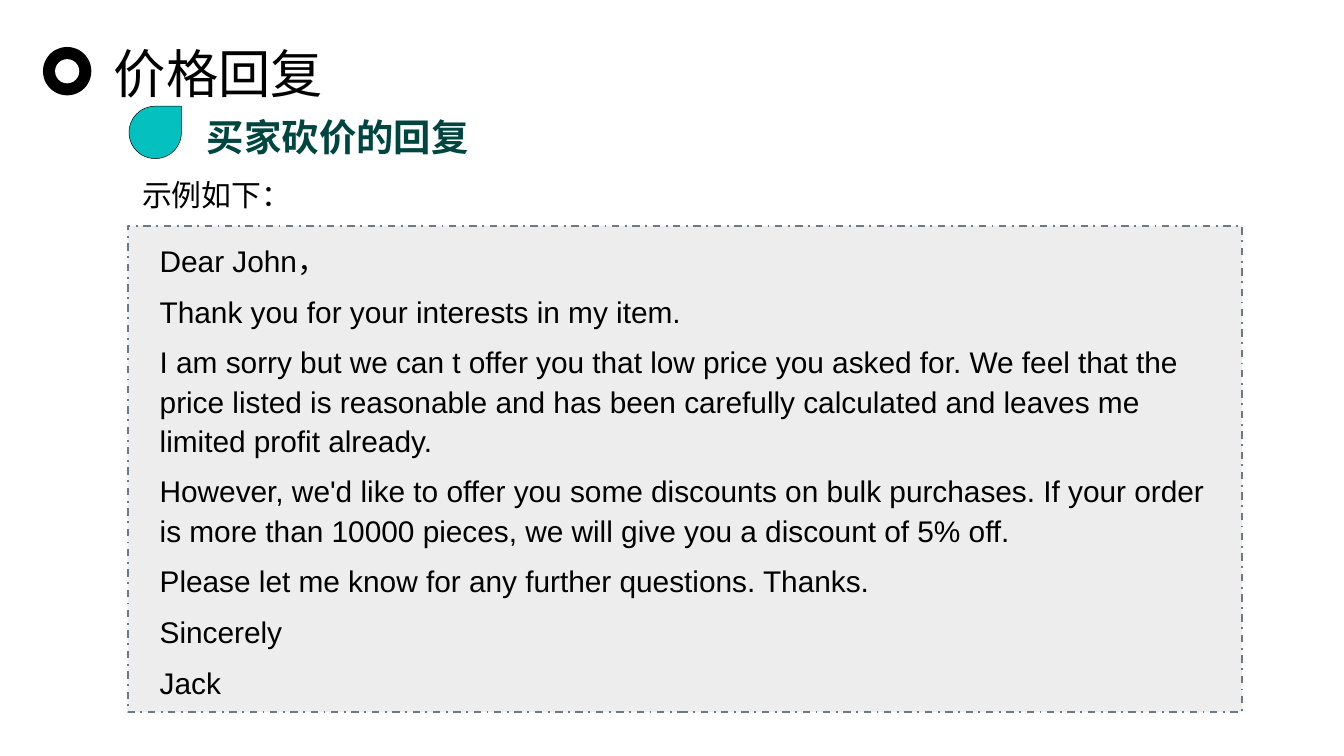
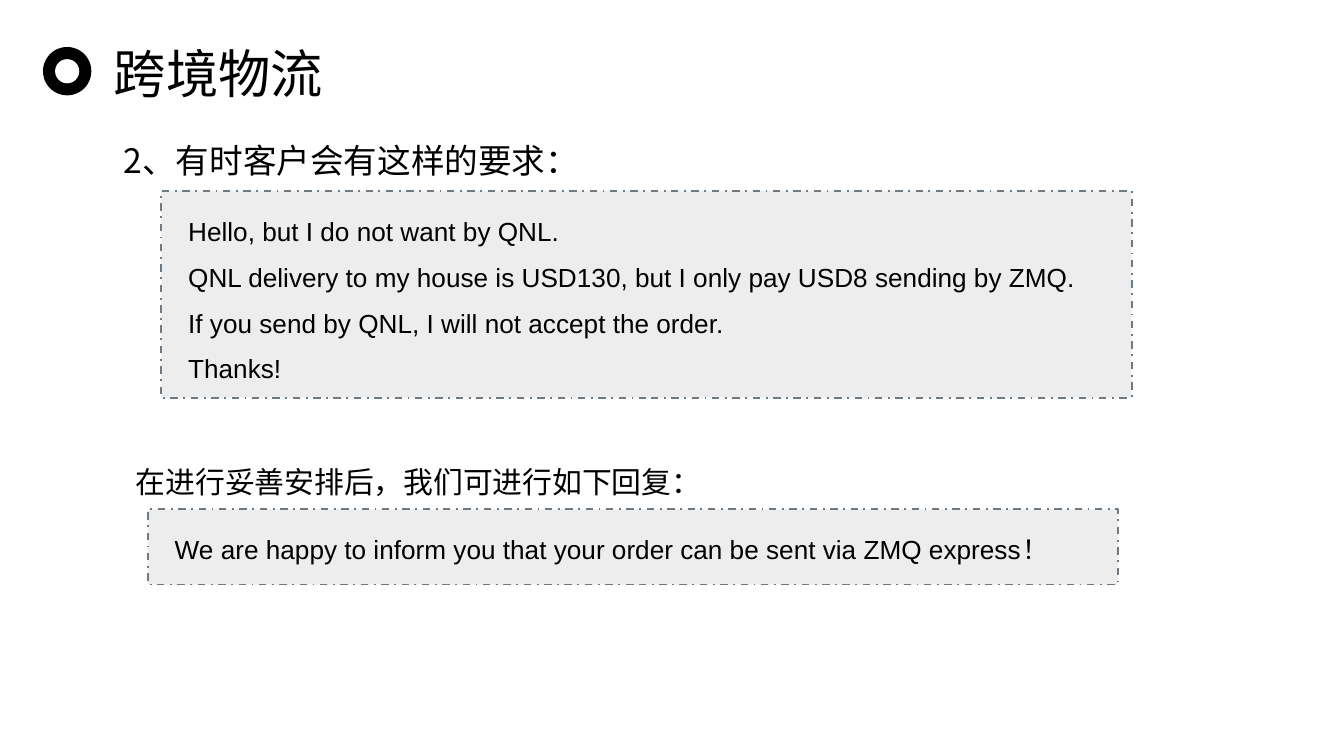
from pptx import Presentation
from pptx.dml.color import RGBColor
from pptx.enum.dml import MSO_LINE
from pptx.enum.shapes import MSO_SHAPE
from pptx.enum.text import MSO_ANCHOR, PP_ALIGN
from pptx.oxml.ns import qn
from pptx.util import Inches, Pt
from lxml.etree import SubElement

HEADING_FONT = "Noto Sans CJK SC"
LETTER_FONT = "Arial"
BLACK, WHITE = "000000", "FFFFFF"
TEAL, DARK_TEAL = "04C0BF", "004640"
PANEL_FILL, PANEL_LINE = "EEEDED", "6D7A84"
WIDE_MARGINS = (0.1, 0.05)
NARROW_MARGINS = (0.09, 0.04)


def colour(hex_string):
    return RGBColor.from_string(hex_string)


def add_filled_shape(shapes, kind, box, fill, line=None, line_width=1, dash=None):
    shape = shapes.add_shape(kind, *map(Inches, box))
    shape.shadow.inherit = False
    shape.fill.solid()
    shape.fill.fore_color.rgb = colour(fill)
    if line is None:
        shape.line.fill.background()
    else:
        shape.line.color.rgb = colour(line)
        shape.line.width = Pt(line_width)
        if dash is not None:
            shape.line.dash_style = dash
    return shape


def add_text(shapes, box, lines, size, font=HEADING_FONT, text_colour=BLACK,
             bold=False, line_spacing=1.0, space_before=0,
             margins=NARROW_MARGINS, wrap=True):
    text_frame = shapes.add_textbox(*map(Inches, box)).text_frame
    text_frame.word_wrap = wrap
    text_frame.vertical_anchor = MSO_ANCHOR.TOP
    text_frame.margin_left = text_frame.margin_right = Inches(margins[0])
    text_frame.margin_top = text_frame.margin_bottom = Inches(margins[1])
    text_frame.text = "\n".join(lines)
    for index, paragraph in enumerate(text_frame.paragraphs):
        paragraph.alignment = PP_ALIGN.LEFT
        paragraph.line_spacing = line_spacing
        paragraph.space_before = Pt(space_before if index else 0)
        for run in paragraph.runs:
            run.font.size = Pt(size)
            run.font.bold = bold
            run.font.color.rgb = colour(text_colour)
            run.font.name = font
            SubElement(run.font._element, qn("a:ea")).set("typeface", font)


def add_title(slide, title, left=0.32, top=0.26):
    ring = slide.shapes.add_group_shape().shapes
    for inset, fill in ((0, BLACK), (0.09, WHITE)):
        diameter = 0.36 - 2 * inset
        box = (left + inset, top + 0.09 + inset, diameter, diameter)
        add_filled_shape(ring, MSO_SHAPE.OVAL, box, fill)
    add_text(slide.shapes, (left + 0.43, top, 1.76, 0.57), [title], 28,
             margins=WIDE_MARGINS, wrap=False)


def add_section_heading(slide, heading, left, top):
    add_filled_shape(slide.shapes, MSO_SHAPE.TEAR, (left, top, 0.39, 0.39),
                     TEAL, BLACK, 0.25)
    add_text(slide.shapes, (left + 0.49, top - 0.08, 2.33, 0.53), [heading], 20,
             text_colour=DARK_TEAL, bold=True, line_spacing=1.3)


def add_letter(slide, panel, text_offset, text_size, lines, size,
               line_spacing=1.1, margins=NARROW_MARGINS):
    left, top = panel[:2]
    group = slide.shapes.add_group_shape().shapes
    add_filled_shape(group, MSO_SHAPE.RECTANGLE, panel, PANEL_FILL, PANEL_LINE,
                     dash=MSO_LINE.DASH_DOT)
    text_box = (left + text_offset[0], top + text_offset[1], *text_size)
    add_text(group, text_box, lines, size, LETTER_FONT,
             line_spacing=line_spacing, space_before=6, margins=margins)


def build_price_reply(slide):
    add_title(slide, "价格回复")
    add_section_heading(slide, "买家砍价的回复", 0.96, 0.79)
    add_text(slide.shapes, (0.96, 1.13, 8.19, 0.54), ["示例如下："], 16,
             line_spacing=1.5, margins=WIDE_MARGINS)
    add_letter(slide, (0.95, 1.68, 8.29, 3.62), (0.14, 0.05), (8.07, 3.52), [
        "Dear John，",
        "Thank you for your interests in my item.",
        "I am sorry but we can t offer you that low price you asked for. "
        "We feel that the price listed is reasonable and has been carefully "
        "calculated and leaves me limited profit already.",
        "However, we'd like to offer you some discounts on bulk purchases. "
        "If your order is more than 10000 pieces, we will give you a discount of 5% off.",
        "Please let me know for any further questions. Thanks.",
        "Sincerely",
        "Jack",
    ], 16, margins=WIDE_MARGINS)


def build_shipping(slide):
    add_title(slide, "跨境物流")
    add_text(slide.shapes, (0.83, 0.91, 3.67, 0.48), ["2、有时客户会有这样的要求："],
             18, line_spacing=1.3)
    add_letter(slide, (1.2, 1.42, 7.22, 1.54), (0.11, 0.12), (7.02, 1.38), [
        "Hello, but I do not want by QNL.",
        "QNL delivery to my house is USD130, but I only pay USD8 sending by ZMQ.",
        "If you send by QNL, I will not accept the order.",
        "Thanks!",
    ], 14)
    add_text(slide.shapes, (0.92, 3.33, 4.68, 0.44),
             ["在进行妥善安排后，我们可进行如下回复："], 16, line_spacing=1.3)
    add_letter(slide, (1.1, 3.79, 7.22, 0.56), (0.11, 0.07), (7.02, 0.39), [
        "We are happy to inform you that your order can be sent via ZMQ express！",
    ], 14, line_spacing=1.3)


def main():
    presentation = Presentation()
    presentation.slide_width = Inches(10)
    presentation.slide_height = Inches(10) * 9 // 16
    for build in (build_price_reply, build_shipping):
        slide = presentation.slides.add_slide(presentation.slide_layouts[6])
        slide.background.fill.solid()
        slide.background.fill.fore_color.rgb = colour(WHITE)
        build(slide)
    presentation.save("out.pptx")


if __name__ == "__main__":
    main()
